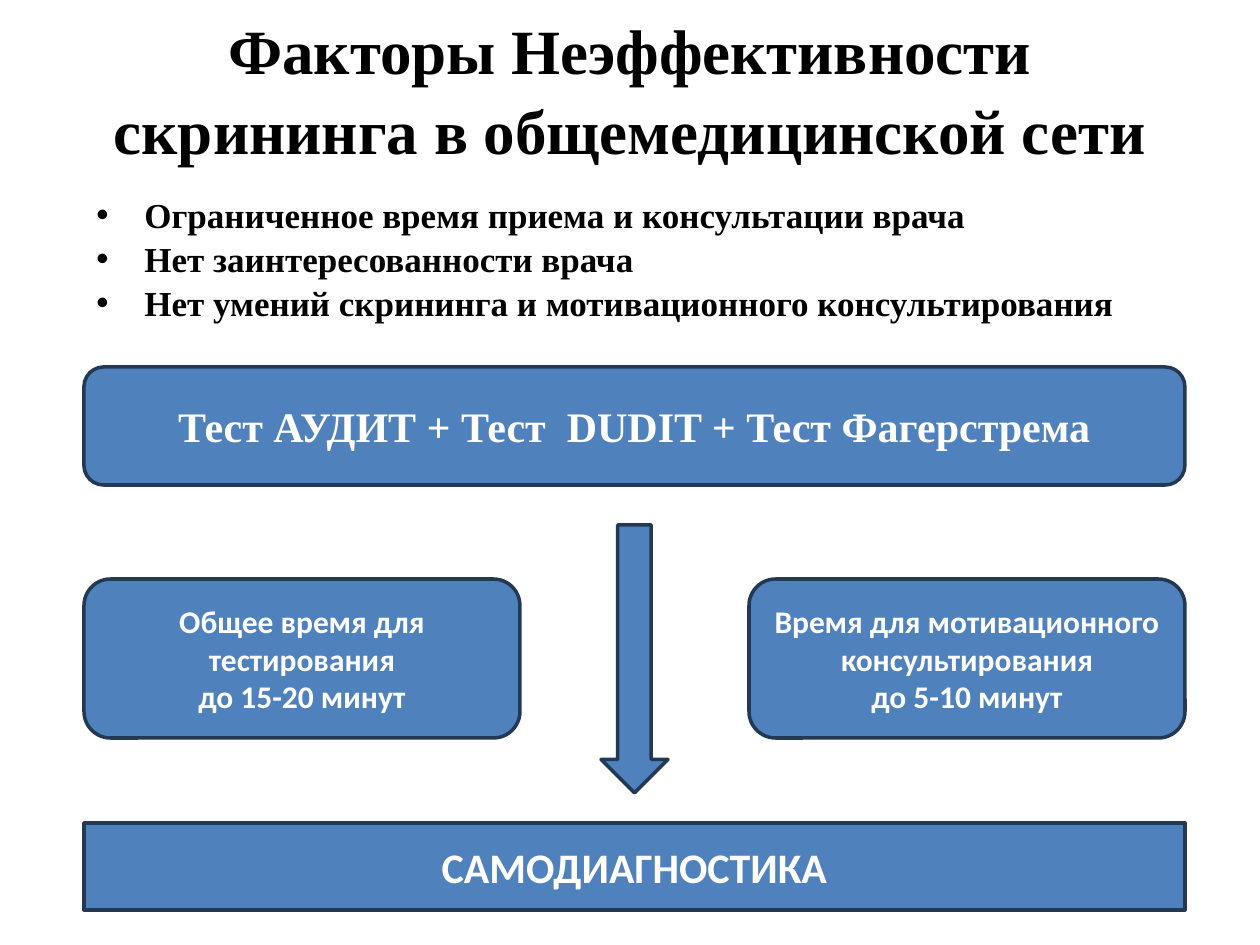
from pptx import Presentation
from pptx import util as u
from pptx.dml.color import RGBColor
from pptx.enum import shapes, text
from pptx.oxml.ns import qn
from lxml import etree

PX = 914400 // 126
COLORS = {"ink": "000000", "fill": "4F81BD", "line": "233953", "light": "FFFFFF"}
SERIF, SANS = "Times New Roman", "Calibri"
SHAPE = shapes.MSO_SHAPE


def px(*values):
    return [u.Emu(v * PX) for v in values]


def rgb(name):
    return RGBColor.from_string(COLORS[name])


class Deck:
    def __init__(self, width, height):
        self.prs = Presentation()
        self.prs.slide_width, self.prs.slide_height = px(width, height)
        self.s = self.prs.slides.add_slide(self.prs.slide_layouts[6])

    def set_text(self, tf, lines, size, font, color, align, anchor, spacing=None):
        tf.word_wrap = True
        tf.vertical_anchor = anchor
        for i, line in enumerate(lines):
            p = tf.paragraphs[0] if i == 0 else tf.add_paragraph()
            p.text = line
            p.alignment = align
            p.line_spacing = spacing
            p.font.size, p.font.name, p.font.bold = u.Pt(size), font, True
            p.font.color.rgb = rgb(color)

    def title(self, box, line):
        sp = self.s.shapes.add_textbox(*px(*box))
        self.set_text(sp.text_frame, [line], 36, SERIF, "ink",
                      text.PP_ALIGN.CENTER, text.MSO_ANCHOR.MIDDLE, 1.05)

    def bullets(self, box, lines, indent=48):
        sp = self.s.shapes.add_textbox(*px(*box))
        self.set_text(sp.text_frame, lines, 20, SERIF, "ink",
                      text.PP_ALIGN.JUSTIFY, text.MSO_ANCHOR.TOP, 1.05)
        for p in sp.text_frame.paragraphs:
            pPr = p._p.get_or_add_pPr()
            pPr.set("marL", str(indent * PX))
            pPr.set("indent", str(-indent * PX))
            font = etree.Element(qn("a:buFont"), typeface="Arial")
            mark = etree.Element(qn("a:buChar"), char="•")
            pPr.find(qn("a:lnSpc")).addnext(font)
            font.addnext(mark)

    def block(self, kind, box, lines=(), size=18, font=SANS):
        sp = self.s.shapes.add_shape(kind, *px(*box))
        sp.shadow.inherit = False
        sp.fill.solid()
        sp.fill.fore_color.rgb = rgb("fill")
        sp.line.color.rgb = rgb("line")
        sp.line.width = u.Pt(2)
        self.set_text(sp.text_frame, lines, size, font, "light",
                      text.PP_ALIGN.CENTER, text.MSO_ANCHOR.MIDDLE)


def main():
    deck = Deck(1260, 945)
    left, width, half = 84, 1101, 436

    # Heading and factors
    deck.title((0, 0, 1260, 175), "Факторы Неэффективности\nскрининга в общемедицинской сети")
    deck.bullets((left, 185, width, 149), [
        "Ограниченное время приема и консультации врача",
        "Нет заинтересованности врача",
        "Нет умений скрининга и мотивационного консультирования",
    ])

    # Tests
    deck.block(SHAPE.ROUNDED_RECTANGLE, (left, 367, width, 118),
               ["Тест АУДИТ + Тест  DUDIT + Тест Фагерстрема"], 24, SERIF)

    # Time needed, on both sides of the arrow
    times = [
        ["Общее время для тестирования", "до 15-20 минут"],
        ["Время для мотивационного консультирования", "до 5-10 минут"],
    ]
    for i, lines in enumerate(times):
        deck.block(SHAPE.ROUNDED_RECTANGLE,
                   (left + i * (width - half), 579, half, 159), lines)

    # Outcome
    deck.block(SHAPE.RECTANGLE, (left, 823, width, 87), ["САМОДИАГНОСТИКА"], 24)
    deck.block(SHAPE.DOWN_ARROW, (left + (width - 67) // 2, 525, 67, 268))

    deck.prs.save("out.pptx")


if __name__ == "__main__":
    main()
